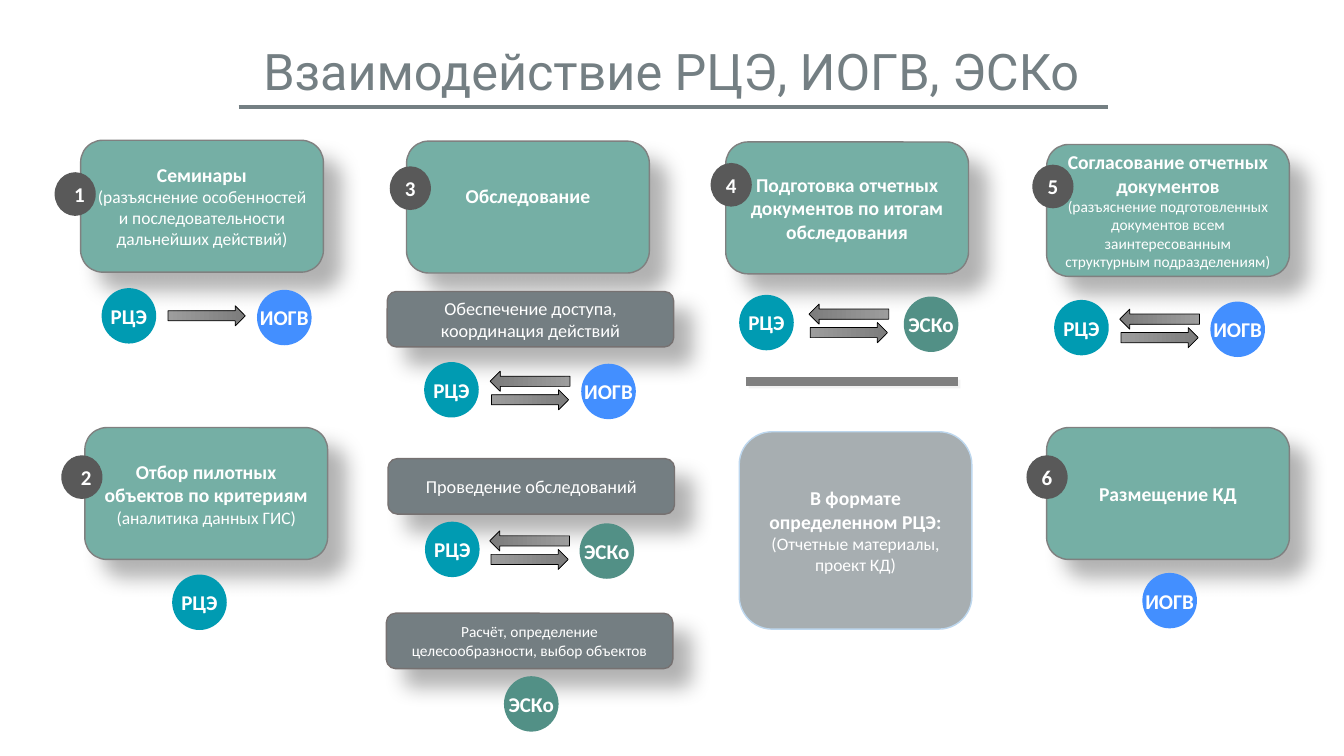
from dataclasses import dataclass

from lxml import etree
from pptx import Presentation
from pptx import util as u
from pptx.dml import color
from pptx.enum import shapes, text
from pptx.oxml import ns

# The slide is a grid of 160 columns by 90 rows of square cells.
COLUMNS, ROWS = 160, 90
CELL = u.Inches(7.5) / ROWS

CARD = (28.9, 15.7)
BAR = (34.1, 6.6)
PANEL = (27.7, 23.5)
CIRCLE = (6.5, 6.6)
BADGE = (4.9, 5.2)
LEFT_ARROW = (9.5, 2.4)
RIGHT_ARROW = (9.2, 2.4)


@dataclass(frozen=True)
class Shadow:
    color: str
    opacity: int
    blur: float
    distance: float


@dataclass(frozen=True)
class Theme:
    title_font: str = "Roboto"
    body_font: str = "Calibri"
    title: str = "747F83"
    white: str = "FFFFFF"
    black: str = "000000"
    card: str = "75AFA5"
    card_line: str = "808080"
    bar: str = "747E82"
    bar_line: str = "767171"
    panel: str = "A7AEB1"
    panel_line: str = "BDD7EE"
    badge: str = "595959"
    arrow_tail: str = "9D9D9D"
    arrow_tip: str = "7C7C7C"
    title_size: float = 36
    heading_size: float = 14
    note_size: float = 12.5
    bar_size: float = 13
    small_size: float = 11
    label_size: float = 15
    block_shadow: Shadow = Shadow("000000", 30, 15, 18)
    divider_shadow: Shadow = Shadow("E7E6E6", 50, 0, 2.8)


THEME = Theme()
PARTY_COLORS = {"РЦЭ": "009BB2", "ИОГВ": "438FFF", "ЭСКо": "529086"}


@dataclass(frozen=True)
class Line:
    text: str
    size: float
    bold: bool = False
    color: str = THEME.white
    font: str = THEME.body_font


@dataclass(frozen=True)
class Stage:
    number: str
    left: float
    top: float
    badge_left: float
    badge_top: float
    heading: str
    note: str = ""
    note_size: float = THEME.note_size
    lift: float = 0
    badge_nudge: float = 0


@dataclass(frozen=True)
class Bar:
    left: float
    top: float
    text: str
    size: float = THEME.bar_size


@dataclass(frozen=True)
class Party:
    left: float
    top: float
    name: str


@dataclass(frozen=True)
class Exchange:
    left: float
    top: float
    span: float
    partner: str
    mutual: bool = True


STAGES = [
    Stage("1", 9.6, 16.7, 6.5, 20.5, "Семинары",
          "(разъяснение особенностей и последовательности дальнейших действий)", badge_nudge=1),
    Stage("2", 10.1, 50.9, 7.3, 54.2, "Отбор пилотных объектов по критериям",
          "(аналитика данных ГИС)", badge_nudge=1),
    Stage("3", 48.4, 16.8, 46.4, 19.8, "Обследование", lift=2.8),
    Stage("4", 86.4, 16.9, 84.6, 19.4, "Подготовка отчетных документов по итогам обследования"),
    Stage("5", 124.6, 17.2, 122.9, 19.6, "Согласование отчетных документов",
          "(разъяснение подготовленных документов всем заинтересованным "
          "структурным подразделениям)", THEME.small_size),
    Stage("6", 124.6, 50.9, 122.2, 54.2, "Размещение КД"),
]
BARS = [
    Bar(46.1, 34.7, "Обеспечение доступа, координация действий"),
    Bar(46.2, 54.6, "Проведение обследований"),
    Bar(46, 73, "Расчёт, определение целесообразности, выбор объектов", THEME.small_size),
]
EXCHANGES = [
    Exchange(12.1, 34.3, 18.5, "ИОГВ", mutual=False),
    Exchange(50.5, 43.1, 18.7, "ИОГВ"),
    Exchange(50.6, 62.1, 18.4, "ЭСКо"),
    Exchange(88, 35.1, 19.6, "ЭСКо"),
    Exchange(125.5, 35.7, 18.6, "ИОГВ"),
]
LONE_PARTIES = [Party(20.5, 68.4, "РЦЭ"), Party(60, 80.5, "ЭСКо"), Party(136, 68.2, "ИОГВ")]


def cells(*counts: float) -> list[int]:
    return [round(count * CELL) for count in counts]


def rgb(value: str) -> color.RGBColor:
    return color.RGBColor.from_string(value)


def add_shadow(properties, shadow: Shadow) -> None:
    """Put an outer shadow, cast down and to the right, into the effect list."""
    effects = properties.find(ns.qn("a:effectLst"))
    outer = etree.SubElement(
        effects, ns.qn("a:outerShdw"), blurRad=str(u.Pt(shadow.blur)),
        dist=str(u.Pt(shadow.distance)), dir="2700000", algn="tl", rotWithShape="0")
    tint = etree.SubElement(outer, ns.qn("a:srgbClr"), val=shadow.color)
    etree.SubElement(tint, ns.qn("a:alpha"), val=str(shadow.opacity * 1000))


def write_lines(frame, lines: list[Line]) -> None:
    frame.text = "\n".join(line.text for line in lines)
    for paragraph, line in zip(frame.paragraphs, lines):
        paragraph.alignment = text.PP_ALIGN.CENTER
        font = paragraph.runs[0].font
        font.name, font.size, font.bold = line.font, u.Pt(line.size), line.bold
        font.color.rgb = rgb(line.color)


def add_block(slide, kind, left: float, top: float, size: tuple[float, float], fill: str,
              outline: str = "", lines: list[Line] | None = None,
              shadow: Shadow | None = None):
    shape = slide.shapes.add_shape(kind, *cells(left, top, *size))
    shape.shadow.inherit = False
    shape.fill.solid()
    shape.fill.fore_color.rgb = rgb(fill)
    if outline:
        shape.line.color.rgb, shape.line.width = rgb(outline), u.Pt(1)
    else:
        shape.line.fill.background()
    if shadow:
        add_shadow(shape._element.spPr, shadow)
    shape.text_frame.vertical_anchor = text.MSO_ANCHOR.MIDDLE
    write_lines(shape.text_frame, lines or [])
    return shape


def add_disc(slide, left: float, top: float, size: tuple[float, float], fill: str,
             label: str, nudge: float = 0) -> None:
    disc = add_block(slide, shapes.MSO_SHAPE.OVAL, left, top, size, fill,
                     lines=[Line(label, THEME.label_size, True)])
    frame = disc.text_frame
    frame.word_wrap = False
    frame.margin_left, frame.margin_right, frame.margin_top, frame.margin_bottom = cells(
        nudge, 0, 0, 0)


def add_party(slide, party: Party) -> None:
    add_disc(slide, party.left, party.top, CIRCLE, PARTY_COLORS[party.name], party.name)


def add_arrow(slide, kind, center: float, middle: float, size: tuple[float, float],
              angle: int) -> None:
    width, height = size
    arrow = slide.shapes.add_shape(
        kind, *cells(center - width / 2, middle - height / 2, width, height))
    arrow.shadow.inherit = False
    arrow.fill.gradient()
    arrow.fill.gradient_angle = angle
    for stop, shade in zip(arrow.fill.gradient_stops, (THEME.arrow_tail, THEME.arrow_tip)):
        stop.color.rgb = rgb(shade)
    arrow.line.color.rgb, arrow.line.width = rgb(THEME.black), u.Pt(0.5)


def add_exchange(slide, exchange: Exchange) -> None:
    """Draw two parties with one or two arrows centred in the gap between them."""
    left, top = exchange.left, exchange.top
    add_party(slide, Party(left, top, "РЦЭ"))
    add_party(slide, Party(left + exchange.span, top + 0.2, exchange.partner))
    center = left + (exchange.span + CIRCLE[0]) / 2
    if exchange.mutual:
        add_arrow(slide, shapes.MSO_SHAPE.LEFT_ARROW, center, top + 2.3, LEFT_ARROW, 180)
    add_arrow(slide, shapes.MSO_SHAPE.RIGHT_ARROW, center,
              top + (4.5 if exchange.mutual else 3.3), RIGHT_ARROW, 0)


def add_rule(slide, start: float, end: float, row: float, stroke: str, width: float,
             shadow: Shadow | None = None) -> None:
    rule = slide.shapes.add_connector(shapes.MSO_CONNECTOR.STRAIGHT,
                                      *cells(start, row, end, row))
    rule.line.color.rgb, rule.line.width = rgb(stroke), u.Pt(width)
    etree.SubElement(rule._element.spPr, ns.qn("a:effectLst"))
    if shadow:
        add_shadow(rule._element.spPr, shadow)


def add_stage(slide, stage: Stage) -> None:
    lines = [Line(stage.heading, THEME.heading_size, True)]
    if stage.note:
        lines.append(Line(stage.note, stage.note_size))
    card = add_block(slide, shapes.MSO_SHAPE.ROUNDED_RECTANGLE, stage.left, stage.top, CARD,
                     THEME.card, THEME.card_line, lines, THEME.block_shadow)
    card.text_frame.margin_bottom += cells(stage.lift)[0]
    add_disc(slide, stage.badge_left, stage.badge_top, BADGE, THEME.badge, stage.number,
             stage.badge_nudge)


def main() -> None:
    presentation = Presentation()
    presentation.slide_width, presentation.slide_height = cells(COLUMNS, ROWS)
    slide = presentation.slides.add_slide(presentation.slide_layouts[6])

    title = slide.shapes.add_textbox(*cells(27.1, 4.2, 105.7, 8.5))
    title.text_frame.word_wrap = True
    write_lines(title.text_frame, [Line("Взаимодействие РЦЭ, ИОГВ, ЭСКо", THEME.title_size,
                                        color=THEME.title, font=THEME.title_font)])
    add_rule(slide, 28.4, 131.9, 12.7, THEME.title, 3)

    for stage in STAGES:
        add_stage(slide, stage)
    for bar in BARS:
        add_block(slide, shapes.MSO_SHAPE.ROUNDED_RECTANGLE, bar.left, bar.top, BAR, THEME.bar,
                  THEME.bar_line, [Line(bar.text, bar.size)], THEME.block_shadow)
    add_rule(slide, 88.8, 114, 45.4, THEME.card_line, 6, THEME.divider_shadow)
    add_block(slide, shapes.MSO_SHAPE.ROUNDED_RECTANGLE, 88, 51.4, PANEL, THEME.panel,
              THEME.panel_line, [Line("В формате определенном РЦЭ:", THEME.heading_size, True),
                                 Line("(Отчетные материалы, проект КД)", THEME.note_size)])
    for exchange in EXCHANGES:
        add_exchange(slide, exchange)
    for party in LONE_PARTIES:
        add_party(slide, party)

    presentation.save("out.pptx")


if __name__ == "__main__":
    main()
